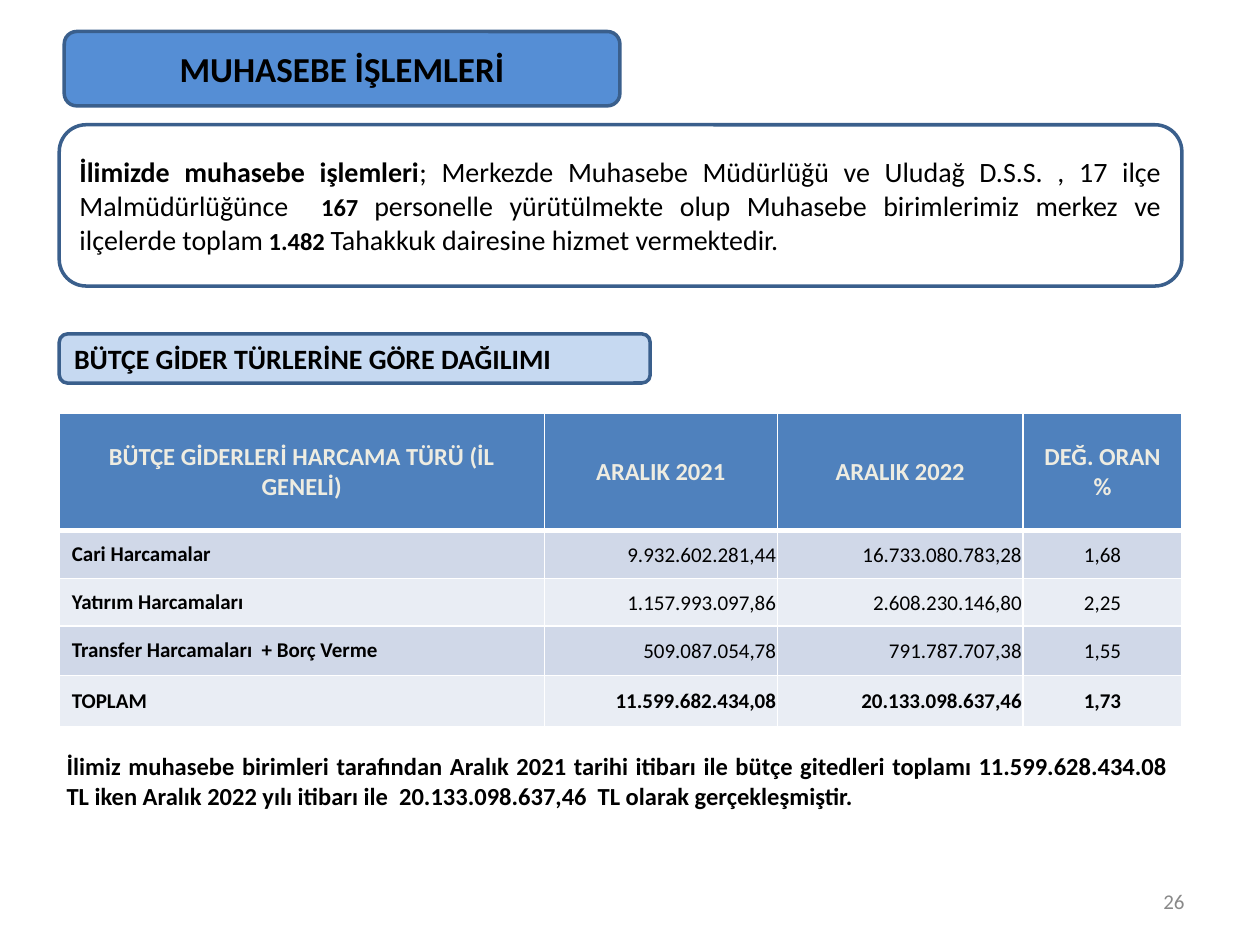
from pptx import Presentation
from pptx.dml.color import RGBColor
from pptx.enum.shapes import MSO_SHAPE as Shape
from pptx.enum.text import MSO_ANCHOR as Anchor, PP_ALIGN as Align
from pptx.oxml import parse_xml
from pptx.oxml.ns import nsdecls
from pptx.util import Inches, Pt

EDGE, BLACK, WHITE = "3A5F8C", "000000", "FFFFFF"
HEAD, BANDS = "4F81BD", ("D0D8E8", "E9EDF4")


def color(code):
    return RGBColor.from_string(code)


class Deck:
    font = "Calibri"

    def __init__(self, prs):
        self.slide = prs.slides.add_slide(prs.slide_layouts[5])
        self.shapes = self.slide.shapes

    def put(self, frame, runs, align=Align.LEFT, ink=BLACK):
        """Fill a frame with one paragraph of (text, size, bold) runs."""
        frame.word_wrap = True
        frame.vertical_anchor = Anchor.MIDDLE
        para = frame.paragraphs[0]
        para.alignment = align
        for text, size, bold in runs:
            run = para.add_run()
            run.text = text
            run.font.name = self.font
            run.font.size = Pt(size)
            run.font.bold = bold
            run.font.color.rgb = color(ink)

    def panel(self, box, fill=None):
        shape = self.shapes.add_shape(Shape.ROUNDED_RECTANGLE, *map(Inches, box))
        shape.shadow.inherit = False
        if fill:
            shape.fill.solid()
            shape.fill.fore_color.rgb = color(fill)
        else:
            shape.fill.background()
        shape.line.color.rgb = color(EDGE)
        shape.line.width = Pt(2)
        return shape

    def title(self, box, text, fill):
        # The panel goes behind the title placeholder
        back = self.panel(box, fill)
        head = self.shapes.title
        head._element.addprevious(back._element)
        head.left, head.top, head.width, head.height = map(Inches, box)
        self.put(head.text_frame, [(text, 20, True)], Align.CENTER)

    def text(self, box, runs, align, ink=BLACK):
        shape = self.shapes.add_textbox(*map(Inches, box))
        self.put(shape.text_frame, runs, align, ink)

    def cell(self, cell, text, size, bold, align, ink, fill, tight, rules):
        pads = (0.01, 0.01, 0.01, 0) if tight else (0.1, 0.05, 0.1, 0.05)
        (cell.margin_left, cell.margin_top,
         cell.margin_right, cell.margin_bottom) = map(Inches, pads)
        self.put(cell.text_frame, [(text, size, bold)], align, ink)
        cell.vertical_anchor = Anchor.MIDDLE
        props = cell._tc.get_or_add_tcPr()
        for side, width in zip("LRTB", rules):
            props.append(parse_xml(
                f'<a:ln{side} {nsdecls("a")} w="{Pt(width)}"><a:solidFill>'
                f'<a:srgbClr val="{WHITE}"/></a:solidFill></a:ln{side}>'))
        cell.fill.solid()
        cell.fill.fore_color.rgb = color(fill)

    def table(self, box, cols, rows, data):
        grid = self.shapes.add_table(len(rows), len(cols), *map(Inches, box)).table
        for col, width in zip(grid.columns, cols):
            col.width = Inches(width)
        for row, height in zip(grid.rows, rows):
            row.height = Inches(height)
        aligns = (Align.LEFT, Align.RIGHT, Align.RIGHT, Align.CENTER)
        last = len(data) - 1
        for r, line in enumerate(data):
            for c, text in enumerate(line):
                spot = grid.cell(r, c)
                if r == 0:
                    self.cell(spot, text, 14, True, Align.CENTER, "EEECE1",
                              HEAD, False, (1, 1, 1, 3))
                else:
                    self.cell(spot, text, 12, c == 0 or r == last, aligns[c],
                              BLACK, BANDS[(r - 1) % 2], c > 0,
                              (1, 1, 3 if r == 1 else 1, 1))


def main():
    prs = Presentation()
    prs.slide_width, prs.slide_height = Inches(10), Inches(7.5)
    deck = Deck(prs)

    # Title and introduction
    deck.title((0.51, 0.25, 4.41, 0.59), "MUHASEBE İŞLEMLERİ", "558ED5")
    intro = deck.panel((0.47, 0.99, 8.91, 1.28))
    deck.put(intro.text_frame, [
        ("İlimizde muhasebe işlemleri", 16, True),
        ("; Merkezde Muhasebe Müdürlüğü ve Uludağ D.S.S. , 17 ilçe "
         "Malmüdürlüğünce ", 16, False),
        (" 167 ", 14, True),
        ("personelle yürütülmekte olup Muhasebe birimlerimiz merkez ve "
         "ilçelerde toplam", 16, False),
        (" ", 14, False),
        ("1.482 ", 14, True),
        ("Tahakkuk dairesine hizmet vermektedir.", 16, False),
    ], Align.JUSTIFY)

    # Budget section
    label = deck.panel((0.47, 2.65, 4.69, 0.39), "C6D9F1")
    deck.put(label.text_frame,
             [("BÜTÇE GİDER TÜRLERİNE GÖRE DAĞILIMI", 16, True)])
    deck.table((0.47, 3.28, 8.91, 2.49), (3.85, 1.85, 1.95, 1.26),
               (0.93, 0.38, 0.38, 0.39, 0.41), [
        ("BÜTÇE GİDERLERİ HARCAMA TÜRÜ (İL GENELİ)", "ARALIK 2021",
         "ARALIK 2022", "DEĞ. ORAN %"),
        ("Cari Harcamalar", "9.932.602.281,44", "16.733.080.783,28", "1,68"),
        ("Yatırım Harcamaları", "1.157.993.097,86", "2.608.230.146,80", "2,25"),
        ("Transfer Harcamaları  + Borç Verme", "509.087.054,78",
         "791.787.707,38", "1,55"),
        ("TOPLAM", "11.599.682.434,08", "20.133.098.637,46", "1,73"),
    ])

    # Summary and page number
    deck.text((0.43, 5.91, 8.94, 0.57), [(
        "İlimiz muhasebe birimleri tarafından Aralık 2021 tarihi itibarı ile "
        "bütçe gitedleri toplamı 11.599.628.434.08 TL iken Aralık 2022 yılı "
        "itibarı ile  20.133.098.637,46  TL olarak gerçekleşmiştir.",
        14, True)], Align.JUSTIFY)
    deck.text((7.17, 6.95, 2.33, 0.4), [("26", 12, False)], Align.RIGHT, "898989")

    prs.save("out.pptx")


if __name__ == "__main__":
    main()
